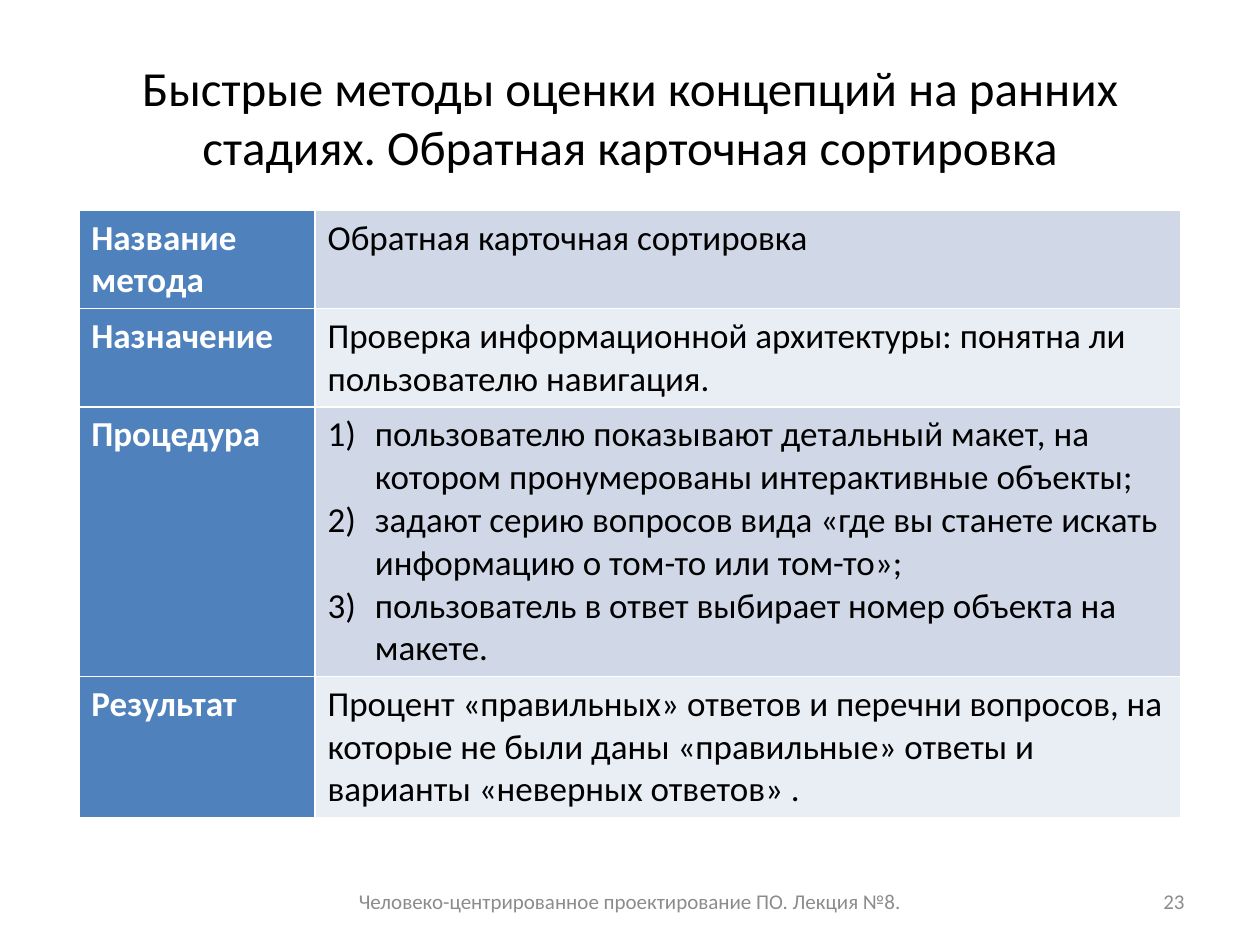
from dataclasses import dataclass

from lxml.etree import SubElement
from pptx import Presentation
from pptx.dml.color import RGBColor
from pptx.enum.text import MSO_ANCHOR, PP_ALIGN
from pptx.oxml.ns import qn
from pptx.util import Inches, Pt

COLS, ROWS = 16, 150


@dataclass(frozen=True)
class Theme:
    font: str = "Calibri"
    ink: str = "000000"
    paper: str = "FFFFFF"
    muted: str = "8C8C8C"
    accent: str = "4F81BD"
    bands: tuple = ("D0D8E8", "E9EDF4")
    title: int = 28
    body: int = 20
    small: int = 12
    indent: float = 0.375


class Deck:
    def __init__(self, theme):
        self.theme = theme
        self.prs = Presentation()
        self.prs.slide_width, self.prs.slide_height = Inches(10), Inches(7.5)
        self.slide = self.prs.slides.add_slide(self.prs.slide_layouts[5])

    def wide(self, cols):
        return round(self.prs.slide_width * cols / COLS)

    def tall(self, rows):
        return round(self.prs.slide_height * rows / ROWS)

    def box(self, x, y, w, h):
        return self.wide(x), self.tall(y), self.wide(w), self.tall(h)

    def style(self, frame, size, color, align=PP_ALIGN.LEFT, bold=False):
        for para in frame.paragraphs:
            para.alignment = align
            for run in para.runs:
                font = run.font
                font.name, font.size, font.bold = self.theme.font, Pt(size), bold
                font.color.rgb = RGBColor.from_string(color)

    def title(self, text, *area):
        shape = self.slide.shapes.title
        shape.left, shape.top, shape.width, shape.height = self.box(*area)
        frame = shape.text_frame
        frame.text = text
        frame.vertical_anchor = MSO_ANCHOR.MIDDLE
        self.style(frame, self.theme.title, self.theme.ink, PP_ALIGN.CENTER)

    def note(self, text, align, *area):
        frame = self.slide.shapes.add_textbox(*self.box(*area)).text_frame
        frame.text = text
        frame.word_wrap = True
        frame.vertical_anchor = MSO_ANCHOR.MIDDLE
        self.style(frame, self.theme.small, self.theme.muted, align)

    def table(self, rows, x, y, widths, heights):
        area = self.box(x, y, sum(widths), sum(heights))
        table = self.slide.shapes.add_table(len(rows), len(widths), *area).table
        for col, width in zip(table.columns, widths):
            col.width = self.wide(width)
        for i, (head, body) in enumerate(rows):
            table.rows[i].height = self.tall(heights[i])
            band = self.theme.bands[i % 2]
            self.cell(table.cell(i, 0), head, self.theme.accent, self.theme.paper, True)
            self.cell(table.cell(i, 1), body, band, self.theme.ink)

    def cell(self, cell, text, fill, color, bold=False):
        """Fill a cell; a list of texts becomes numbered steps."""
        steps = isinstance(text, list)
        cell.text_frame.text = "\n".join(text) if steps else text
        self.style(cell.text_frame, self.theme.body, color, bold=bold)
        if steps:
            self.number(cell.text_frame)
        self.border(cell)
        cell.fill.solid()
        cell.fill.fore_color.rgb = RGBColor.from_string(fill)

    def number(self, frame):
        indent = Inches(self.theme.indent)
        for para in frame.paragraphs:
            props = para._p.get_or_add_pPr()
            props.set("marL", str(indent))
            props.set("indent", str(-indent))
            SubElement(props, qn("a:buFont"), typeface="+mj-lt")
            SubElement(props, qn("a:buAutoNum"), type="arabicParenR")

    def border(self, cell):
        props = cell._tc.get_or_add_tcPr()
        for side in ("lnL", "lnR", "lnT", "lnB"):
            line = SubElement(props, qn(f"a:{side}"), w=str(Pt(1)))
            fill = SubElement(line, qn("a:solidFill"))
            SubElement(fill, qn("a:srgbClr"), val=self.theme.paper)


def main():
    deck = Deck(Theme())
    deck.title(
        "Быстрые методы оценки концепций на ранних стадиях. "
        "Обратная карточная сортировка",
        0.8, 6, 14.4, 25,
    )
    deck.note("Человеко-центрированное проектирование ПО. Лекция №8.",
              PP_ALIGN.CENTER, 3.87, 139, 8.26, 8)
    deck.note("23", PP_ALIGN.RIGHT, 11.47, 139, 3.73, 8)
    rows = [
        ("Название метода", "Обратная карточная сортировка"),
        ("Назначение",
         "Проверка информационной архитектуры: понятна ли пользователю навигация."),
        ("Процедура", [
            "пользователю показывают детальный макет, на котором "
            "пронумерованы интерактивные объекты;",
            "задают серию вопросов вида «где вы станете искать "
            "информацию о том-то или том-то»;",
            "пользователь в ответ выбирает номер объекта на макете.",
        ]),
        ("Результат",
         "Процент «правильных» ответов и перечни вопросов, на которые не были "
         "даны «правильные» ответы и варианты «неверных ответов» ."),
    ]
    deck.table(rows, 1, 33.4, widths=(3, 11), heights=(15.6, 15.6, 42.8, 22.4))
    deck.prs.save("out.pptx")


if __name__ == "__main__":
    main()
